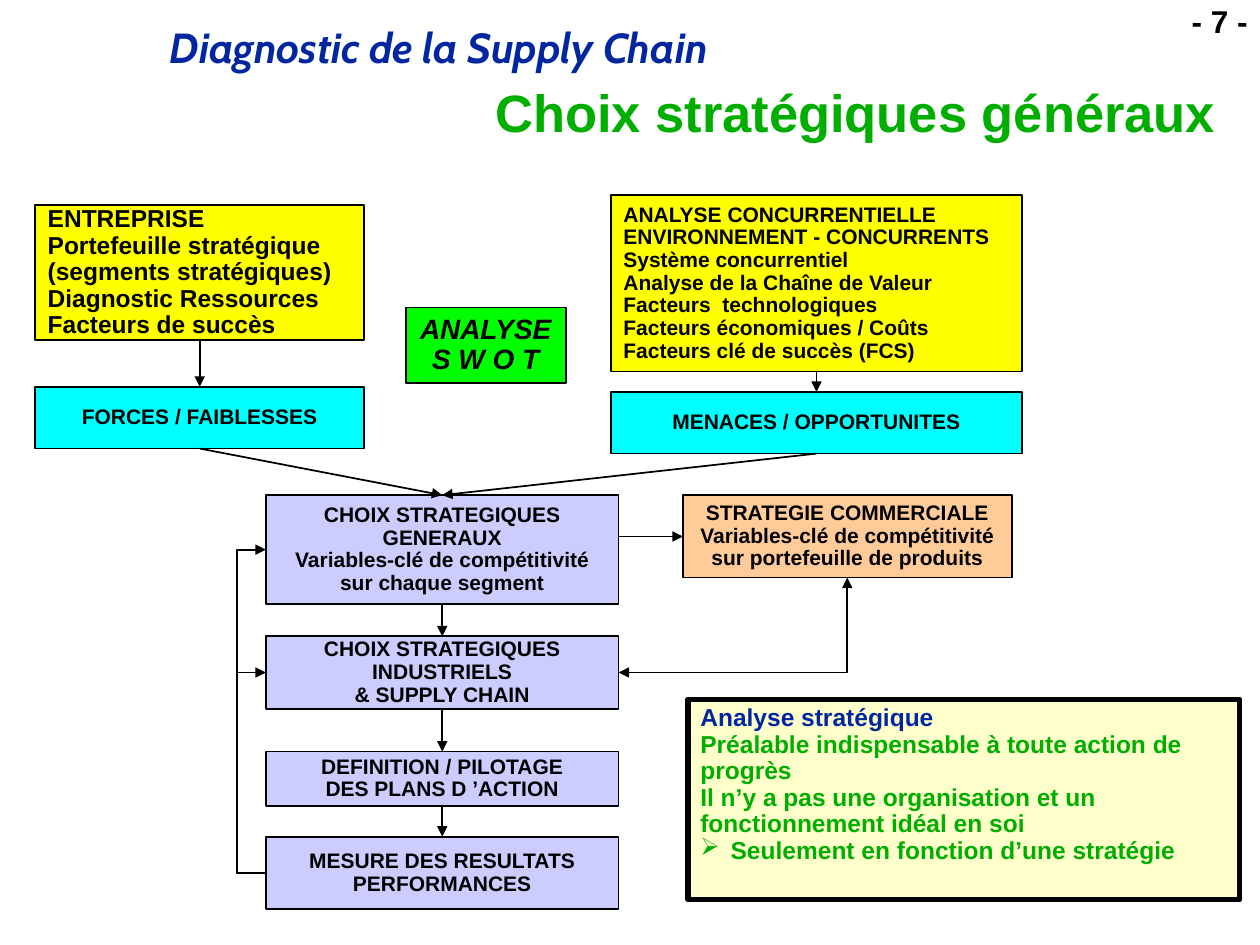
from dataclasses import dataclass

from pptx import Presentation
from pptx.dml.color import RGBColor
from pptx.enum.shapes import MSO_CONNECTOR as CONN, MSO_SHAPE as SHAPE
from pptx.enum.text import MSO_ANCHOR as ANCHOR, PP_ALIGN as ALIGN
from pptx.oxml.ns import qn
from pptx.util import Inches, Pt
from lxml.etree import SubElement

COLS, ROWS = 100, 75  # the slide grid
TOP, LEFT, BOTTOM, RIGHT = range(4)  # connection sites of a rectangle


class Theme:
    width, height = Inches(10), Inches(7.5)
    font, banner_font = "Arial", "Cabin"
    black, navy, green = "000000", "00279F", "00AE00"
    yellow, cyan, lime = "FFFF00", "00FFFF", "00FF00"
    lilac, peach, cream = "CCCCFF", "FFCC99", "FFFFCC"
    title, banner, page, swot, body, small = 30, 24, 18, 16, 14, 12
    line, frame, spacing = 1, 3, 0.9


@dataclass
class Box:
    """An area in grid columns and rows."""
    col: float
    row: float
    cols: float
    rows: float

    def sub(self, col, row, cols, rows):
        return Box(self.col + col, self.row + row, cols, rows)

    def emu(self):
        return (x_at(self.col), y_at(self.row), x_at(self.cols), y_at(self.rows))


def x_at(col):
    return round(Theme.width * col / COLS)


def y_at(row):
    return round(Theme.height * row / ROWS)


def rgb(value):
    return RGBColor.from_string(value)


def style(p, size, color=Theme.black, align=ALIGN.LEFT, font=Theme.font, italic=False):
    p.alignment = align
    p.line_spacing = Theme.spacing
    for r in p.runs:
        f = r.font
        f.name, f.size, f.bold, f.italic = font, Pt(size), True, italic
        f.color.rgb = rgb(color)


def add_label(slide, box, text, size, **look):
    tf = slide.shapes.add_textbox(*box.emu()).text_frame
    tf.word_wrap = True
    tf.text = text
    style(tf.paragraphs[0], size, **look)


def add_panel(slide, box, fill, line=Theme.line):
    sp = slide.shapes.add_shape(SHAPE.RECTANGLE, *box.emu())
    sp.shadow.inherit = False
    sp.fill.solid()
    sp.fill.fore_color.rgb = rgb(fill)
    sp.line.color.rgb = rgb(Theme.black)
    sp.line.width = Pt(line)
    return sp


def add_block(slide, box, fill, lines, size=Theme.small, align=ALIGN.CENTER, italic=False):
    sp = add_panel(slide, box, fill)
    tf = sp.text_frame
    tf.word_wrap = False
    tf.vertical_anchor = ANCHOR.MIDDLE
    tf.text = "\v".join(lines)
    style(tf.paragraphs[0], size, align=align, italic=italic)
    return sp


def add_arrow(slide, start, end, kind=CONN.STRAIGHT, both=False):
    c = slide.shapes.add_connector(kind, *start, *end)
    c.line.color.rgb = rgb(Theme.black)
    c.line.width = Pt(Theme.line)
    ln = c.line._get_or_add_ln()
    for tag in ("a:headEnd", "a:tailEnd") if both else ("a:tailEnd",):
        SubElement(ln, qn(tag), type="triangle")
    SubElement(c._element.spPr, qn("a:effectLst"))
    return c


def link(slide, source, target, out=BOTTOM, into=TOP):
    c = add_arrow(slide, (0, 0), (0, 0))
    c.begin_connect(source, out)
    c.end_connect(target, into)


def middle(sp):
    return sp.top + sp.height // 2


def add_header(slide, box):
    add_label(slide, box.sub(12.5, 1.7, 80.8, 4.6), "Diagnostic de la Supply Chain",
              Theme.banner, color=Theme.navy, font=Theme.banner_font, italic=True)
    add_label(slide, box.sub(90.9, 0, 9.1, 3.7), "- 7 -", Theme.page, align=ALIGN.RIGHT)
    title = slide.shapes.title
    title.left, title.top, title.width, title.height = box.sub(18.3, 6.7, 79.2, 5).emu()
    tf = title.text_frame
    tf.text = "Choix stratégiques généraux"
    tf.vertical_anchor = ANCHOR.MIDDLE
    style(tf.paragraphs[0], Theme.title, Theme.green, ALIGN.RIGHT)


def add_analysis(slide, box, rows, gap, lines, size, finding):
    """A yellow analysis leading down to its blue finding, which is returned."""
    source = add_block(slide, box.sub(0, 0, box.cols, rows), Theme.yellow, lines, size, ALIGN.LEFT)
    result = add_block(slide, box.sub(0, rows + gap, box.cols, box.rows - rows - gap),
                       Theme.cyan, [finding])
    link(slide, source, result)
    return result


def add_cascade(slide, box, findings):
    """The chain of decisions with its feedback loops and commercial branch."""
    steps = [
        (0, 8.65, ["CHOIX STRATEGIQUES", "GENERAUX", "Variables-clé de compétitivité",
                   "sur chaque segment"]),
        (11.2, 5.75, ["CHOIX STRATEGIQUES", "INDUSTRIELS", "& SUPPLY CHAIN"]),
        (20.35, 4.3, ["DEFINITION / PILOTAGE", "DES PLANS D ’ACTION"]),
        (27.1, 5.75, ["MESURE DES RESULTATS", "PERFORMANCES"]),
    ]
    blocks = [add_block(slide, box.sub(0, row, 28, rows), Theme.lilac, lines)
              for row, rows, lines in steps]
    general, industrial, _, results = blocks
    for source, target in zip(blocks, blocks[1:]):
        link(slide, source, target)
    for finding in findings:
        link(slide, finding, general)

    sales = add_block(slide, box.sub(33.1, 0, 26.1, 6.55), Theme.peach,
                      ["STRATEGIE COMMERCIALE", "Variables-clé de compétitivité",
                       "sur portefeuille de produits"])
    edge = general.left + general.width
    add_arrow(slide, (edge, middle(sales)), (sales.left, middle(sales))).end_connect(sales, LEFT)
    corner = add_arrow(slide, (edge, middle(industrial)),
                       (sales.left + sales.width // 2, sales.top + sales.height),
                       CONN.ELBOW, both=True)
    corner._element.spPr.find(qn("a:prstGeom")).set("prst", "bentConnector2")

    step = x_at(0.1)  # the bend is measured in widths of the connector
    for target in (industrial, general):
        loop = add_arrow(slide, (results.left - step, middle(results)),
                         (target.left, middle(target)), CONN.ELBOW)
        guides = loop._element.spPr.find(qn("a:prstGeom")).get_or_add_avLst()
        SubElement(guides, qn("a:gd"), name="adj1", fmla="val -2200000")


def add_note(slide, box):
    tf = add_panel(slide, box, Theme.cream, Theme.frame).text_frame
    tf.word_wrap = True
    tf.vertical_anchor = ANCHOR.TOP
    tf.text = "\n".join(["Analyse stratégique",
                         "Préalable indispensable à toute action de progrès",
                         "Il n’y a pas une organisation et un fonctionnement idéal en soi",
                         "Seulement en fonction d’une stratégie"])
    for i, p in enumerate(tf.paragraphs):
        style(p, Theme.body, Theme.green if i else Theme.navy)
    pPr = p._p.get_or_add_pPr()
    pPr.set("marL", str(x_at(2.4)))
    pPr.set("indent", str(-x_at(2.4)))
    SubElement(pPr, qn("a:buChar"), char="➢")


def main():
    prs = Presentation()
    prs.slide_width, prs.slide_height = Theme.width, Theme.height
    slide = prs.slides.add_slide(prs.slide_layouts[5])
    add_header(slide, Box(0, 0, COLS, 12))
    company = add_analysis(
        slide, Box(2.8, 16.3, 26.1, 19.3), 10.7, 3.7,
        ["ENTREPRISE", "Portefeuille stratégique", "(segments stratégiques)",
         "Diagnostic Ressources", "Facteurs de succès"], Theme.body, "FORCES / FAIBLESSES")
    market = add_analysis(
        slide, Box(48.5, 15.5, 32.6, 20.5), 14, 1.6,
        ["ANALYSE CONCURRENTIELLE", "ENVIRONNEMENT - CONCURRENTS", "Système concurrentiel",
         "Analyse de la Chaîne de Valeur", "Facteurs  technologiques",
         "Facteurs économiques / Coûts", "Facteurs clé de succès (FCS)"],
        Theme.small, "MENACES / OPPORTUNITES")
    add_block(slide, Box(32.2, 24.4, 12.7, 6), Theme.lime, ["ANALYSE", "S W O T"],
              Theme.swot, italic=True)
    add_cascade(slide, Box(21.1, 39.3, 59.2, 32.9), (company, market))
    add_note(slide, Box(54.6, 55.5, 43.8, 15.9))
    prs.save("out.pptx")


if __name__ == "__main__":
    main()
